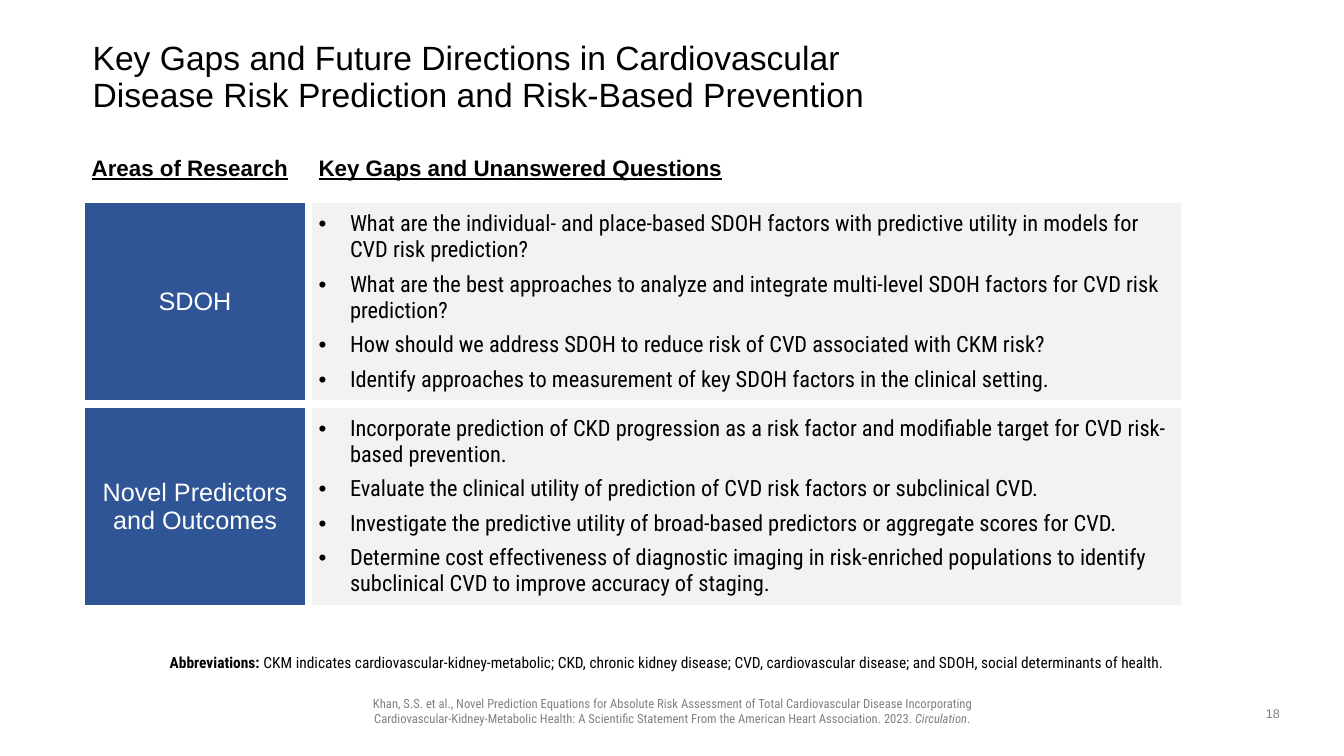
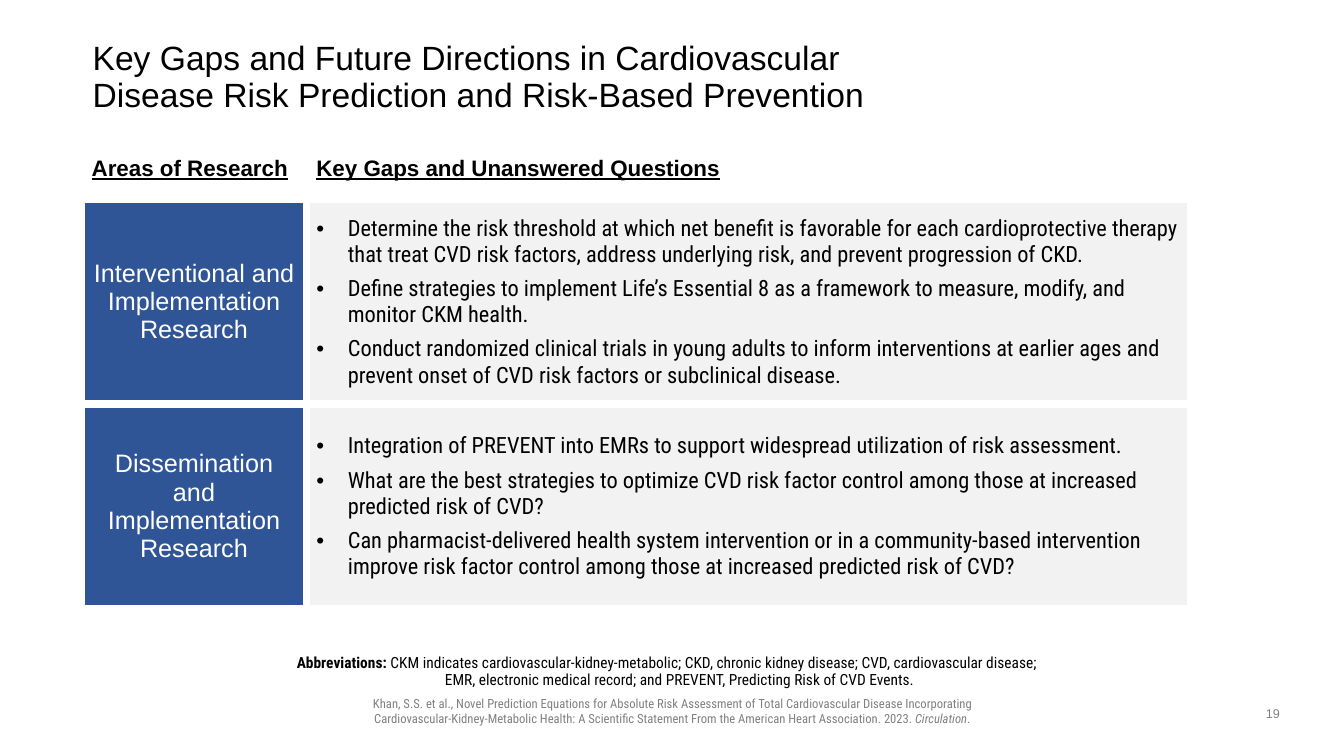
import pptx
import pptx.util
import pptx.dml.color
import pptx.enum.text
import pptx.oxml
import pptx.oxml.ns

Pt = pptx.util.Pt
ALIGN = pptx.enum.text.PP_ALIGN
ANCHOR = pptx.enum.text.MSO_ANCHOR
HUES = {"ink": "000000", "blue": "2F5597", "pale": "F2F2F2", "white": "FFFFFF", "gray": "808080"}
NS = pptx.oxml.ns.nsdecls("a")
SANS, SLIM = "Arial", "Roboto Condensed"

FORMS = {
    "title": {"name": SANS, "size": Pt(24), "color": "ink"},
    "head": {"name": SANS, "size": Pt(16), "color": "ink", "bold": True, "underline": True},
    "area": {"name": SANS, "size": Pt(18), "color": "white", "bold": False},
    "point": {"name": SLIM, "size": Pt(16), "color": "ink", "bold": False},
    "label": {"name": SLIM, "size": Pt(11), "color": "ink", "bold": True},
    "note": {"name": SLIM, "size": Pt(11), "color": "ink", "bold": False},
    "cite": {"name": SLIM, "size": Pt(9), "color": "gray"},
    "slant": {"name": SLIM, "size": Pt(9), "color": "gray", "italic": True},
    "page": {"name": SANS, "size": Pt(9), "color": "gray"},
}

TITLE = "Key Gaps and Future Directions in Cardiovascular Disease Risk Prediction and Risk-Based Prevention"
HEADS = ["Areas of Research", "Key Gaps and Unanswered Questions"]
CITE = [
    [("Khan, S.S. et al., Novel Prediction Equations for Absolute Risk Assessment of Total Cardiovascular Disease Incorporating", "cite")],
    [("Cardiovascular-Kidney-Metabolic Health: A Scientific Statement From the American Heart Association. 2023. ", "cite"),
     ("Circulation", "slant"), (".", "cite")],
]

PAGES = [
    {
        "page": "18",
        "cols": [162, 625.7],
        "rows": [
            ("SDOH", [
                "What are the individual- and place-based SDOH factors with predictive utility in models for CVD risk prediction?",
                "What are the best approaches to analyze and integrate multi-level SDOH factors for CVD risk prediction?",
                "How should we address SDOH to reduce risk of CVD associated with CKM risk?",
                "Identify approaches to measurement of key SDOH factors in the clinical setting.",
            ]),
            ("Novel Predictors and Outcomes", [
                "Incorporate prediction of CKD progression as a risk factor and modifiable target for CVD risk-based prevention.",
                "Evaluate the clinical utility of prediction of CVD risk factors or subclinical CVD.",
                "Investigate the predictive utility of broad-based predictors or aggregate scores for CVD.",
                "Determine cost effectiveness of diagnostic imaging in risk-enriched populations to identify subclinical CVD to improve accuracy of staging.",
            ]),
        ],
        "notes": ["CKM indicates cardiovascular-kidney-metabolic; CKD, chronic kidney disease; CVD, cardiovascular disease; and SDOH, social determinants of health."],
    },
    {
        "page": "19",
        "cols": [160.5, 631.5],
        "rows": [
            ("Interventional and Implementation Research", [
                "Determine the risk threshold at which net benefit is favorable for each cardioprotective therapy that treat CVD risk factors, address underlying risk, and prevent progression of CKD.",
                "Define strategies to implement Life’s Essential 8 as a framework to measure, modify, and monitor CKM health.",
                "Conduct randomized clinical trials in young adults to inform interventions at earlier ages and prevent onset of CVD risk factors or subclinical disease.",
            ]),
            ("Dissemination and Implementation Research", [
                "Integration of PREVENT into EMRs to support widespread utilization of risk assessment.",
                "What are the best strategies to optimize CVD risk factor control among those at increased predicted risk of CVD?",
                "Can pharmacist-delivered health system intervention or in a community-based intervention improve risk factor control among those at increased predicted risk of CVD?",
            ]),
        ],
        "notes": [
            "CKM indicates cardiovascular-kidney-metabolic; CKD, chronic kidney disease; CVD, cardiovascular disease;",
            "EMR, electronic medical record; and PREVENT, Predicting Risk of CVD Events.",
        ],
    },
]


def write(frame, lines, **look):
    paras = []
    for i, line in enumerate(lines):
        para = frame.paragraphs[0] if i == 0 else frame.add_paragraph()
        for key, val in look.items():
            setattr(para, key, val)
        for text, form in line:
            run = para.add_run()
            run.text = text
            for key, val in FORMS[form].items():
                if key == "color":
                    run.font.color.rgb = pptx.dml.color.RGBColor.from_string(HUES[val])
                else:
                    setattr(run.font, key, val)
        paras.append(para)
    return paras


def place(shape, box, pads, anchor):
    for key, val in zip(("left", "top", "width", "height"), box):
        setattr(shape, key, Pt(val))
    frame = shape.text_frame
    for key, val in zip(("left", "top", "right", "bottom"), pads):
        setattr(frame, "margin_" + key, Pt(val))
    frame.auto_size = pptx.enum.text.MSO_AUTO_SIZE.NONE
    frame.word_wrap = True
    frame.vertical_anchor = anchor
    return frame


deck = pptx.Presentation()
deck.slide_width, deck.slide_height = Pt(960), Pt(540)

for page in PAGES:
    slide = deck.slides.add_slide(deck.slide_layouts[1])
    frame = place(slide.shapes.title, (66.2, 28.8, 620, 54), (0, 0, 0, 0), ANCHOR.MIDDLE)
    write(frame, [[(TITLE, "title")]], alignment=ALIGN.LEFT, line_spacing=0.9)

    for box, lines in [
        ((226.8, 493.2, 506.9, 28.8), CITE),
        ((894.2, 500.4, 30.2, 18.7), [[(page["page"], "page")]]),
    ]:
        text = slide.shapes.add_textbox(0, 0, 0, 0)
        frame = place(text, box, (7.2, 3.6, 7.2, 3.6), ANCHOR.TOP)
        write(frame, lines, alignment=ALIGN.CENTER)

    cols, tall = page["cols"], [34.5, 146.2, 146.2]
    grid = slide.shapes.add_table(3, 2, Pt(58.3), Pt(108), Pt(sum(cols)), Pt(sum(tall))).table
    grid.first_row = grid.horz_banding = False
    for col, size in zip(grid.columns, cols):
        col.width = Pt(size)
    for row, size in zip(grid.rows, tall):
        row.height = Pt(size)
    for cell in grid.iter_cells():
        props = cell._tc.get_or_add_tcPr()
        for side in "LRTB":
            props.append(pptx.oxml.parse_xml(
                f'<a:ln{side} {NS} w="{Pt(6)}"><a:solidFill><a:srgbClr val="{HUES["white"]}"/></a:solidFill></a:ln{side}>'))

    for i, head in enumerate(HEADS):
        cell = grid.cell(0, i)
        cell.fill.background()
        write(cell.text_frame, [[(head, "head")]])
    for i, (area, points) in enumerate(page["rows"], 1):
        for j, hue in enumerate(("blue", "pale")):
            cell = grid.cell(i, j)
            cell.fill.solid()
            cell.fill.fore_color.rgb = pptx.dml.color.RGBColor.from_string(HUES[hue])
            cell.vertical_anchor = ANCHOR.MIDDLE
        write(grid.cell(i, 0).text_frame, [[(area, "area")]], alignment=ALIGN.CENTER)
        lines = [[(point, "point")] for point in points]
        for para in write(grid.cell(i, 1).text_frame, lines, space_after=Pt(6)):
            props = para._p.get_or_add_pPr()
            props.set("marL", str(Pt(22.5)))
            props.set("indent", str(-Pt(22.5)))
            props.append(pptx.oxml.parse_xml(f'<a:buFont {NS} typeface="{SANS}"/>'))
            props.append(pptx.oxml.parse_xml(f'<a:buChar {NS} char="•"/>'))

    frame = place(slide.placeholders[1], (66.2, 464.4, 828, 31.7), (0, 3.6, 7.2, 3.6), ANCHOR.TOP)
    lines = [[(note, "note")] for note in page["notes"]]
    lines[0].insert(0, ("Abbreviations: ", "label"))
    paras = write(frame, lines, alignment=ALIGN.CENTER, line_spacing=0.9, space_before=Pt(0))
    for i, para in enumerate(paras):
        props = para._p.get_or_add_pPr()
        props.set("marL", str(Pt(18)))
        props.set("indent", str(0 if i else -Pt(18)))
        props.append(pptx.oxml.parse_xml(f"<a:buNone {NS}/>"))

deck.save("out.pptx")
